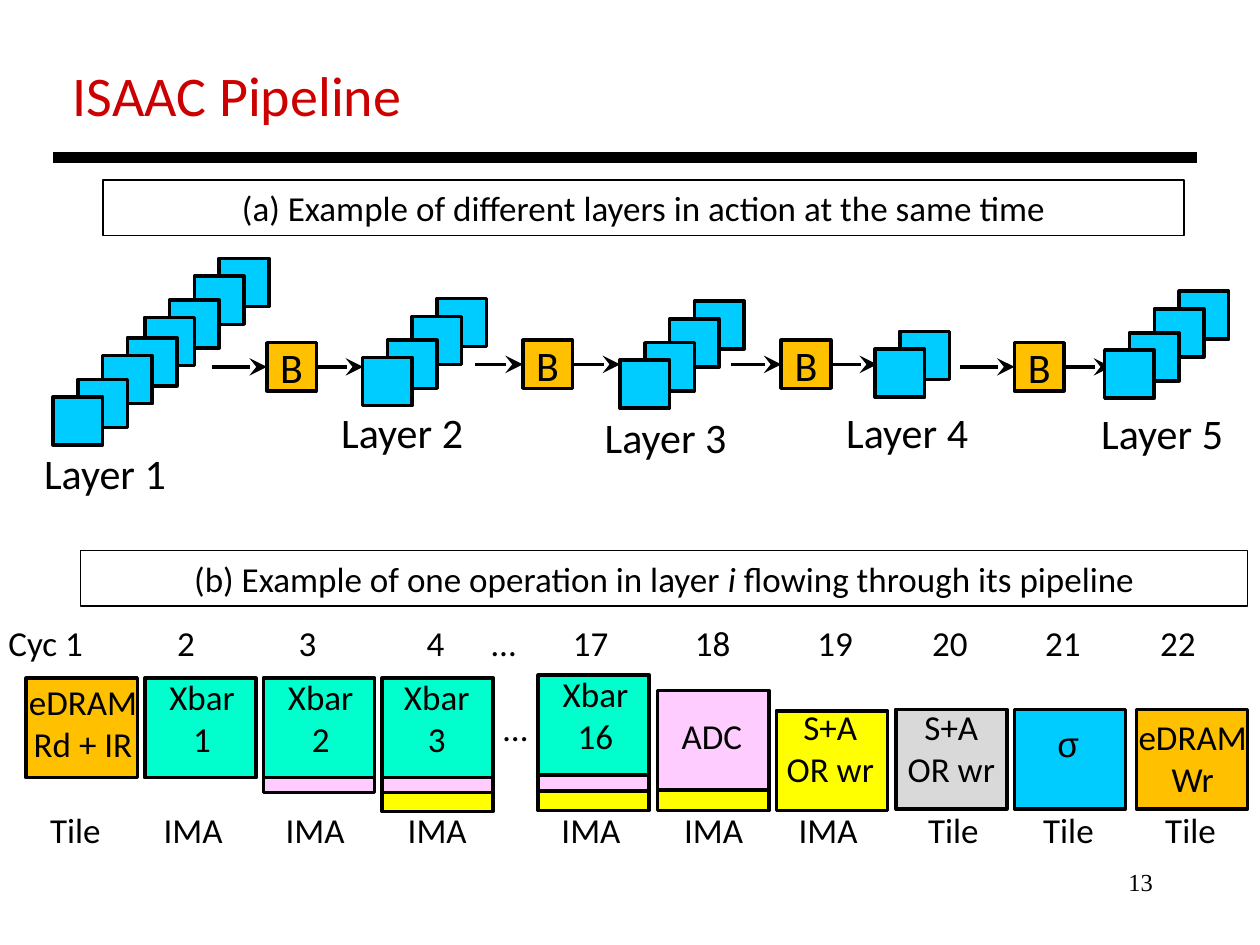
import pptx
import pptx.dml.color
import pptx.enum.shapes
import pptx.enum.text
import pptx.oxml.ns
import pptx.util
from lxml import etree

Cm, Pt = pptx.util.Cm, pptx.util.Pt
qn = pptx.oxml.ns.qn
ALIGN = pptx.enum.text.PP_ALIGN
ANCHOR = pptx.enum.text.MSO_ANCHOR

BLACK, RED = "000000", "CC0000"
BLUE, ORANGE, GREEN = "00CCFF", "FFC000", "00FFCC"
PINK, YELLOW, GREY = "FFCCFF", "FFFF00", "D9D9D9"

TILE_W, TILE_H = 1.0, 0.97
STACK_DX = -0.5
STACK_DY = [0, 0.36, 0.84, 1.19]
STAGE_W, STAGE_H = 2.24, 2.01


def rgb(hex_colour):
    return pptx.dml.color.RGBColor.from_string(hex_colour)


def write(frame, lines, size=20, font="Calibri", colour=BLACK, align=ALIGN.LEFT):
    """Fill a frame; each line is a list of (text, italic) runs."""
    for number, line in enumerate(lines):
        paragraph = frame.add_paragraph() if number else frame.paragraphs[0]
        paragraph.alignment = align
        for text, italic in line:
            run = paragraph.add_run()
            run.text = text
            run.font.size = Pt(size)
            run.font.name = font
            run.font.italic = italic
            run.font.color.rgb = rgb(colour)


def add_label(slide, left, top, width, height, lines, wrap=True, **style):
    label = slide.shapes.add_textbox(Cm(left), Cm(top), Cm(width), Cm(height))
    label.text_frame.word_wrap = wrap
    write(label.text_frame, [[(line, None)] for line in lines], **style)
    return label


def add_box(slide, left, top, width, height, fill=None, weight=2):
    box = slide.shapes.add_shape(pptx.enum.shapes.MSO_SHAPE.RECTANGLE,
                                 Cm(left), Cm(top), Cm(width), Cm(height))
    box.shadow.inherit = False
    if fill:
        box.fill.solid()
        box.fill.fore_color.rgb = rgb(fill)
    else:
        box.fill.background()
    box.line.color.rgb = rgb(BLACK)
    box.line.width = Pt(weight)
    return box


def add_caption(slide, left, top, width, runs):
    caption = add_box(slide, left, top, width, 1.12, weight=0.75)
    caption.text_frame.word_wrap = True
    write(caption.text_frame, [runs], align=ALIGN.CENTER)


def add_line(slide, x1, x2, y, weight=2, arrow=False):
    line = slide.shapes.add_connector(pptx.enum.shapes.MSO_CONNECTOR.STRAIGHT,
                                      Cm(x1), Cm(y), Cm(x2), Cm(y))
    line.line.color.rgb = rgb(BLACK)
    line.line.width = Pt(weight)
    if arrow:
        etree.SubElement(line.line._get_or_add_ln(), qn("a:tailEnd"),
                         type="stealth", w="lg", len="lg")
    etree.SubElement(line._element.spPr, qn("a:effectLst"))
    return line


def add_stack(slide, left, top, count=4):
    """Overlapping tiles, stepping down and left towards the front."""
    for step in range(count):
        add_box(slide, left + step * STACK_DX, top + STACK_DY[step],
                TILE_W, TILE_H, BLUE)


def add_buffer(slide, left, top, arrow_start, arrow_end):
    """Buffer B with an arrow coming in and one going out."""
    buffer = add_box(slide, left, top, TILE_W, TILE_H, ORANGE)
    buffer.text_frame.vertical_anchor = ANCHOR.MIDDLE
    write(buffer.text_frame, [[("B", None)]], size=24, align=ALIGN.CENTER)
    middle = top + TILE_H / 2
    incoming = add_line(slide, arrow_start, left, middle, arrow=True)
    incoming.end_connect(buffer, 1)
    outgoing = add_line(slide, left + TILE_W, arrow_end, middle, arrow=True)
    outgoing.begin_connect(buffer, 3)


def add_tabbed_row(slide, left, top, text, stops):
    row = add_label(slide, left, top, 25.22, 1.12, [text])
    properties = row.text_frame.paragraphs[0]._p.get_or_add_pPr()
    tab_list = etree.SubElement(properties, qn("a:tabLst"))
    for stop in stops:
        etree.SubElement(tab_list, qn("a:tab"), pos=str(int(Cm(stop))), algn="l")


def add_stage(slide, left, bands, lines, label_left, label_top, label_width,
              font="Calibri"):
    """One pipeline stage: bands from back to front, then its label."""
    for top, fill in bands:
        add_box(slide, left, top, STAGE_W, STAGE_H, fill)
    add_label(slide, label_left, label_top, label_width, 1.96, lines,
              font=font, align=ALIGN.CENTER)


def main():
    deck = pptx.Presentation()
    deck.slide_width, deck.slide_height = Cm(25.4), Cm(19.05)
    slide = deck.slides.add_slide(deck.slide_layouts[6])

    # Title, rule and page number
    add_label(slide, 1.22, 1.09, 7.21, 1.63, ["ISAAC Pipeline"], wrap=False,
              size=32, colour=RED)
    add_line(slide, 1.07, 24.13, 3.18, weight=6)
    add_label(slide, 18.21, 17.35, 5.28, 1.27, ["13"], size=14,
              font="Times New Roman", align=ALIGN.RIGHT)

    # (a) Layers joined by buffers
    add_caption(slide, 2.08, 3.63, 21.79, [
        ("(a) Example of different layers in action at the same time", None)])
    for left, top in [(4.42, 5.21), (2.57, 6.81), (8.81, 6.02), (14, 6.07)]:
        add_stack(slide, left, top)
    add_stack(slide, 18.14, 6.68, count=2)
    for buffer in [(5.38, 6.91, 4.27, 7.32), (10.54, 6.86, 9.58, 12.5),
                   (15.75, 6.86, 14.73, 17.68), (20.45, 6.91, 19.35, 22.4)]:
        add_buffer(slide, *buffer)
    add_stack(slide, 23.77, 5.87)
    layer_places = [(0.64, 8.89), (6.63, 8.08), (11.94, 8.18),
                    (16.81, 8.08), (21.95, 8.1)]
    for number, (left, top) in enumerate(layer_places, 1):
        add_label(slide, left, top, 3, 1.28, [f"Layer {number}"], wrap=False,
                  size=24)

    # (b) Pipeline of one operation
    add_caption(slide, 1.63, 11.1, 23.52, [
        ("(b) Example of one operation in layer ", None), ("i", True),
        (" flowing through its pipeline", False)])
    add_tabbed_row(slide, -0.08, 12.4,
                   "Cyc 1\t2\t3\t4\t…\t17\t18\t19\t20\t21\t22",
                   [3.4, 5.85, 8.43, 9.74, 11.38, 13.84, 16.31, 18.62, 20.9,
                    23.22])
    stages = [
        (0.53, [(13.67, ORANGE)], ["eDRAM", "Rd + IR"], -0.33, 13.59, 4.01),
        (2.92, [(13.67, GREEN)], ["Xbar", "1"], 2.97, 13.49, 2.21),
        (5.31, [(13.97, PINK), (13.67, GREEN)], ["Xbar", "2"],
         5.36, 13.49, 2.21),
        (7.7, [(14.35, YELLOW), (13.97, PINK), (13.67, GREEN)], ["Xbar", "3"],
         7.7, 13.49, 2.21),
        (10.85, [(14.33, YELLOW), (13.94, PINK), (13.61, GREEN)],
         ["Xbar", "16"], 10.9, 13.44, 2.21),
        (13.26, [(14.33, YELLOW), (13.92, PINK)], ["ADC"], 13.31, 14.27, 2.08),
        (15.65, [(14.33, YELLOW)], ["S+A", "OR wr"], 15.42, 14.1, 2.64),
        (18.06, [(14.3, GREY)], ["S+A", "OR wr"], 17.86, 14.1, 2.64),
        (20.45, [(14.3, BLUE)], ["σ"], 20.8, 14.45, 1.47, "Arial"),
        (22.91, [(14.3, ORANGE)], ["eDRAM", "Wr"], 22.61, 14.3, 2.87),
    ]
    for stage in stages:
        add_stage(slide, *stage)
    add_label(slide, 9.35, 14.12, 2.08, 1.12, ["…"], align=ALIGN.CENTER)
    add_tabbed_row(slide, 0.1, 16.18,
                   "\tTile\tIMA\tIMA\tIMA\tIMA\tIMA\tIMA\tTile\tTile\tTile",
                   [0.66, 2.95, 5.41, 7.87, 10.97, 13.44, 15.75, 18.36, 20.68,
                    23.14])

    deck.save("out.pptx")


if __name__ == "__main__":
    main()
